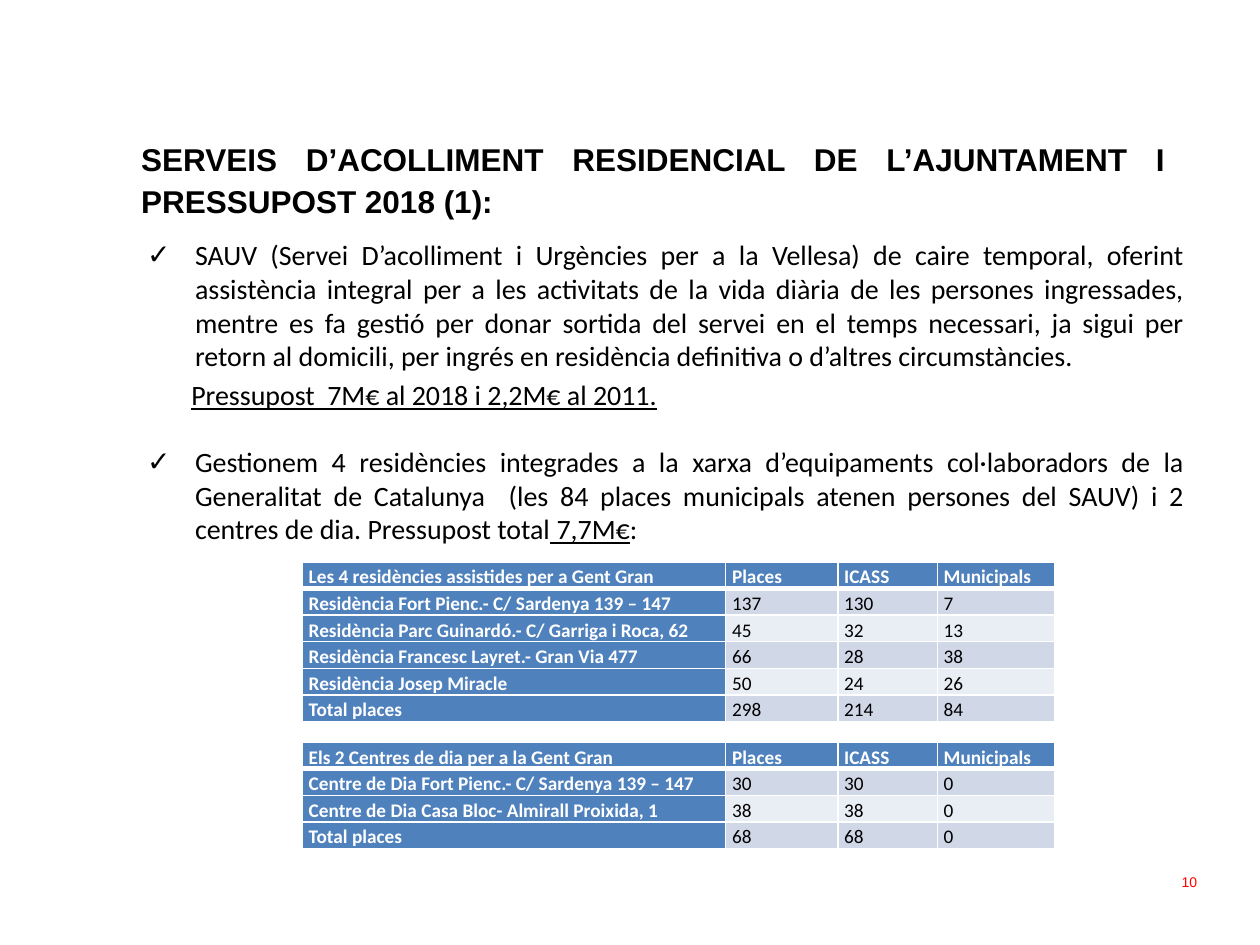
"""Build the slide on municipal residential care services and their 2018 budget."""
from dataclasses import dataclass

from lxml import etree
from pptx import Presentation
from pptx import util as u
from pptx.dml.color import RGBColor
from pptx.enum import text
from pptx.oxml import ns


@dataclass(frozen=True)
class Theme:
    """Colours, fonts and type sizes."""
    ink: str = "000000"
    white: str = "FFFFFF"
    red: str = "FF0000"
    header: str = "4F81BD"
    bands: tuple = ("D0D8E8", "E9EDF4")
    heading_font: str = "Arial"
    body_font: str = "Calibri"
    title: int = 18
    body: int = 16
    table: int = 11
    number: int = 8


T = Theme()
ALIGN = text.PP_ALIGN
ANCHOR = text.MSO_ANCHOR
COLUMNS = (3.36, 0.89, 0.79, 0.93)
ROW_HEIGHT = 0.21
TABLE_LEFT = 2.4
HEADINGS = ("Places", "ICASS", "Municipals")

RESIDENCES = (
    ("Les 4 residències assistides per a Gent Gran", *HEADINGS),
    ("Residència Fort Pienc.- C/ Sardenya 139 – 147", 137, 130, 7),
    ("Residència Parc Guinardó.- C/ Garriga i Roca, 62", 45, 32, 13),
    ("Residència Francesc Layret.- Gran Via 477", 66, 28, 38),
    ("Residència Josep Miracle", 50, 24, 26),
    ("Total places", 298, 214, 84),
)
DAY_CENTRES = (
    ("Els 2 Centres de dia per a la Gent Gran", *HEADINGS),
    ("Centre de Dia Fort Pienc.- C/ Sardenya 139 – 147", 30, 30, 0),
    ("Centre de Dia Casa Bloc- Almirall Proixida, 1", 38, 38, 0),
    ("Total places", 68, 68, 0),
)
SAUV = (
    "SAUV (Servei D’acolliment i Urgències per a la Vellesa) de caire temporal, "
    "oferint assistència integral per a les activitats de la vida diària de les "
    "persones ingressades, mentre es fa gestió per donar sortida del servei en el "
    "temps necessari, ja sigui per retorn al domicili, per ingrés en residència "
    "definitiva o d’altres circumstàncies."
)
SAUV_BUDGET = "Pressupost  7M€ al 2018 i 2,2M€ al 2011."
NETWORK = (
    "Gestionem 4 residències integrades a la xarxa d’equipaments col·laboradors de "
    "la Generalitat de Catalunya  (les 84 places municipals atenen persones del "
    "SAUV) i 2 centres de dia. Pressupost total"
)


def add_text(p, words, size=T.body, font=T.body_font, color=T.ink, bold=False,
             underline=False):
    """Add a formatted run to a paragraph."""
    r = p.add_run()
    r.text = words
    f = r.font
    f.size, f.name, f.bold, f.underline = u.Pt(size), font, bold, underline
    f.color.rgb = RGBColor.from_string(color)


def set_paragraph(p, align=ALIGN.JUSTIFY, before=0, spacing=1.0, indent=0, hanging=0,
                  bullet=None):
    """Set alignment, spacing, indents and bullet of a paragraph."""
    p.alignment, p.space_before, p.line_spacing = align, u.Pt(before), spacing
    props = p._p.get_or_add_pPr()
    props.set("marL", str(u.Inches(indent)))
    props.set("indent", str(-u.Inches(hanging)))
    if bullet:
        etree.SubElement(props, ns.qn("a:buFont")).set("typeface", T.heading_font)
        etree.SubElement(props, ns.qn("a:buChar")).set("char", bullet)


def add_box(s, left, top, width, height, anchor=ANCHOR.TOP):
    """Add a wrapping text box and return its text frame."""
    sp = s.shapes.add_textbox(*map(u.Inches, (left, top, width, height)))
    tf = sp.text_frame
    tf.word_wrap, tf.vertical_anchor = True, anchor
    return tf


def add_title(s, words):
    """Place and format the title."""
    sp = s.shapes.title
    sp.left, sp.top, sp.width, sp.height = map(u.Inches, (1.02, 0.94, 8.33, 0.94))
    tf = sp.text_frame
    tf.vertical_anchor, tf.auto_size = ANCHOR.MIDDLE, text.MSO_AUTO_SIZE.NONE
    p = tf.paragraphs[0]
    set_paragraph(p, spacing=u.Pt(24))
    add_text(p, words, size=T.title, font=T.heading_font, bold=True)


def add_body(s):
    """Add the two service descriptions with their budgets."""
    tf = add_box(s, 1.07, 1.84, 8.43, 2.6)
    p = tf.paragraphs[0]
    set_paragraph(p, indent=0.38, hanging=0.38, bullet="✓")
    add_text(p, SAUV)
    p = tf.add_paragraph()
    set_paragraph(p, before=3.2, indent=0.35)
    add_text(p, SAUV_BUDGET, underline=True)
    p = tf.add_paragraph()
    set_paragraph(p, before=19, indent=0.38, hanging=0.38, bullet="✓")
    add_text(p, NETWORK)
    add_text(p, " 7,7M€", underline=True)
    add_text(p, ":")


def set_borders(cell, bottom):
    """Draw white borders round a cell, with its own bottom width."""
    props = cell._tc.get_or_add_tcPr()
    for side, width in (("L", 1), ("R", 1), ("T", 1), ("B", bottom)):
        ln = etree.SubElement(props, ns.qn(f"a:ln{side}"), w=str(u.Pt(width)))
        fill = etree.SubElement(ln, ns.qn("a:solidFill"))
        etree.SubElement(fill, ns.qn("a:srgbClr")).set("val", T.white)


def fill_cell(cell, value, row, col):
    """Write and format one table cell."""
    heading = row == 0 or col == 0
    set_borders(cell, bottom=3 if row == 0 else 1)
    cell.fill.solid()
    cell.fill.fore_color.rgb = RGBColor.from_string(
        T.header if heading else T.bands[(row - 1) % 2])
    cell.margin_left = cell.margin_right = u.Inches(0.05)
    cell.margin_top = cell.margin_bottom = 0
    cell.vertical_anchor = ANCHOR.BOTTOM
    p = cell.text_frame.paragraphs[0]
    set_paragraph(p, spacing=1.15)
    add_text(p, str(value), size=T.table, bold=heading,
             color=T.white if heading else T.ink)


def add_places_table(s, top, rows):
    """Add a table of places by centre."""
    table = s.shapes.add_table(
        len(rows), len(COLUMNS), u.Inches(TABLE_LEFT), u.Inches(top),
        u.Inches(sum(COLUMNS)), u.Inches(ROW_HEIGHT * len(rows))).table
    table.first_col = True
    for column, width in zip(table.columns, COLUMNS):
        column.width = u.Inches(width)
    for i, row in enumerate(rows):
        for j, value in enumerate(row):
            fill_cell(table.cell(i, j), value, i, j)


def add_page_number(s, number):
    """Add the page number at the bottom right."""
    p = add_box(s, 7.27, 6.8, 2.33, 0.4, anchor=ANCHOR.MIDDLE).paragraphs[0]
    set_paragraph(p, align=ALIGN.RIGHT)
    add_text(p, number, size=T.number, font=T.heading_font, color=T.red)


def main():
    """Build and save the slide."""
    prs = Presentation()
    prs.slide_width, prs.slide_height = u.Inches(10), u.Inches(7.5)
    s = prs.slides.add_slide(prs.slide_layouts[5])
    add_title(s, "SERVEIS D’ACOLLIMENT RESIDENCIAL DE L’AJUNTAMENT I PRESSUPOST 2018 (1):")
    add_body(s)
    add_page_number(s, "10")
    add_places_table(s, 4.46, RESIDENCES)
    add_places_table(s, 5.89, DAY_CENTRES)
    prs.save("out.pptx")


if __name__ == "__main__":
    main()
